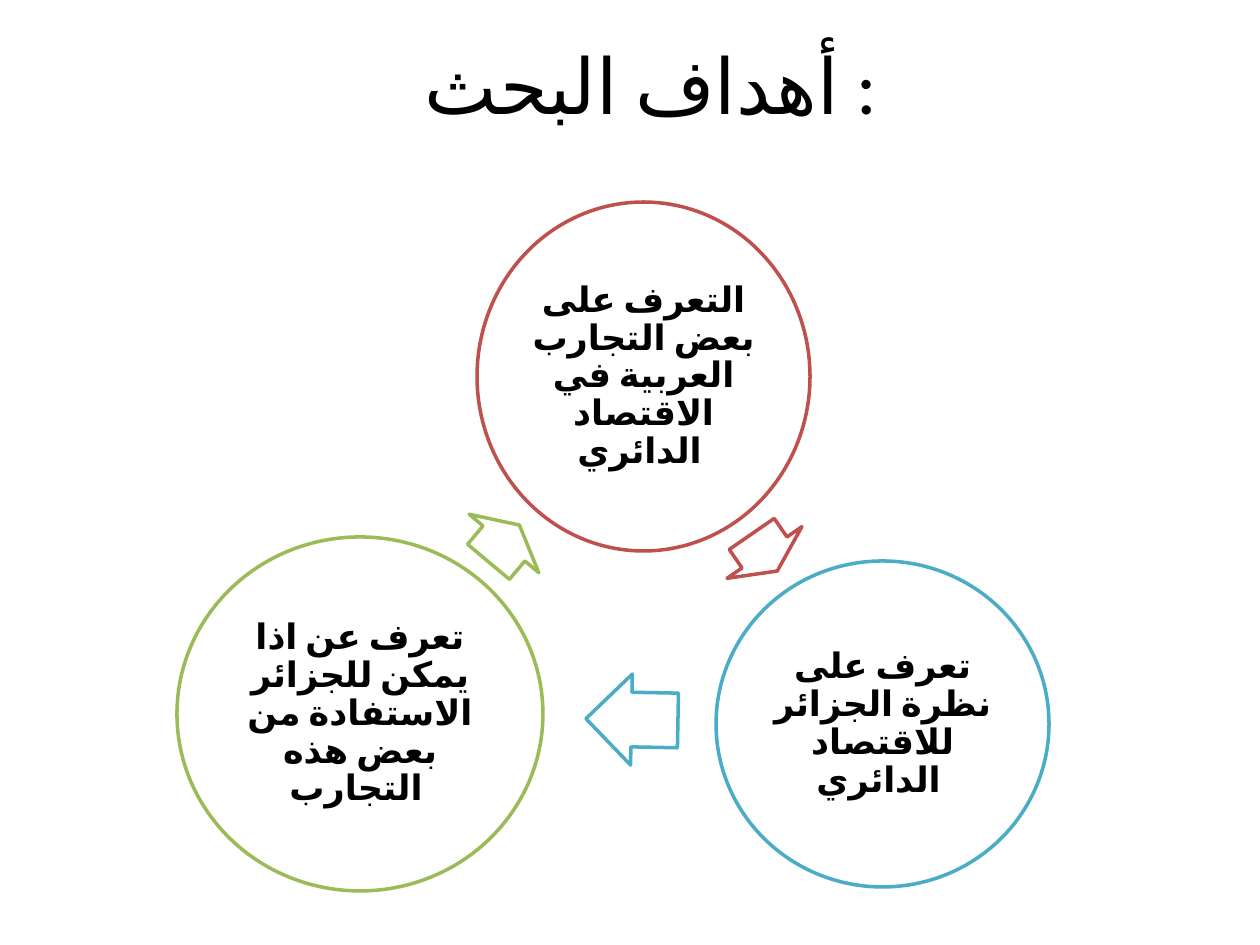
import lxml.etree
import pptx
import pptx.dml.color
import pptx.enum.shapes
import pptx.enum.text
import pptx.oxml.ns
import pptx.util

PIXEL = 914400 / 126
FONT = "Calibri"
COLORS = {
    "white": "FFFFFF",
    "black": "000000",
    "red": "C0504D",
    "blue": "4BACC6",
    "green": "9BBB59",
}
GOALS = [
    ("التعرف على بعض التجارب العربية في الاقتصاد الدائري ", "red",
     (477, 202, 333, 349), (742, 507, 45, 91), 55.4),
    ("تعرف على نظرة الجزائر للاقتصاد الدائري ", "blue",
     (716, 561, 333, 326), (586, 674, 92, 91), 181.1),
    ("تعرف عن اذا يمكن للجزائر الاستفادة من بعض هذه التجارب ", "green",
     (177, 537, 366, 354), (480, 498, 48, 91), 310),
]


def px(length):
    """Turn whole pixels into EMU."""
    return pptx.util.Emu(round(length * PIXEL))


def rgb(name):
    """Look up a named colour."""
    return pptx.dml.color.RGBColor.from_string(COLORS[name])


def set_arabic(run):
    """Give a run the Arabic language and a complex-script font."""
    properties = run._r.get_or_add_rPr()
    properties.set("lang", "ar-DZ")
    script_font = lxml.etree.SubElement(properties, pptx.oxml.ns.qn("a:cs"))
    script_font.set("typeface", FONT)


def write_text(shape, text, size, bold=False, spacing=1.0, margins=(12, 6)):
    """Write one centred paragraph into a shape."""
    frame = shape.text_frame
    frame.word_wrap = True
    frame.vertical_anchor = pptx.enum.text.MSO_ANCHOR.MIDDLE
    frame.margin_left = frame.margin_right = px(margins[0])
    frame.margin_top = frame.margin_bottom = px(margins[1])
    paragraph = frame.paragraphs[0]
    paragraph.alignment = pptx.enum.text.PP_ALIGN.CENTER
    paragraph.line_spacing = spacing
    run = paragraph.add_run()
    run.text = text
    run.font.name = FONT
    run.font.size = pptx.util.Pt(size)
    run.font.bold = bold
    run.font.color.rgb = rgb("black")
    set_arabic(run)


def add_outlined(slide, kind, box, color):
    """Add a white preset shape with a coloured outline."""
    shape = slide.shapes.add_shape(kind, *map(px, box))
    shape.shadow.inherit = False
    shape.fill.solid()
    shape.fill.fore_color.rgb = rgb("white")
    shape.line.color.rgb = rgb(color)
    shape.line.width = pptx.util.Pt(2)
    return shape


def add_goal(slide, text, color, box):
    """Add a circle that holds one research goal."""
    circle = add_outlined(slide, pptx.enum.shapes.MSO_SHAPE.OVAL, box, color)
    write_text(circle, text, 20, bold=True, spacing=0.9, margins=(4, 4))


def add_arrow(slide, color, box, rotation):
    """Add a block arrow that leads to the next goal."""
    arrow = add_outlined(slide, pptx.enum.shapes.MSO_SHAPE.RIGHT_ARROW, box, color)
    arrow.adjustments[0] = 0.6
    arrow.adjustments[1] = 0.5
    arrow.rotation = rotation


def main():
    """Build the slide of research goals."""
    presentation = pptx.Presentation()
    presentation.slide_width = px(1260)
    presentation.slide_height = px(945)
    slide = presentation.slides.add_slide(presentation.slide_layouts[6])
    title = slide.shapes.add_textbox(*map(px, (84, 26, 1134, 115)))
    write_text(title, "أهداف البحث :", 44)
    for text, color, circle_box, arrow_box, rotation in GOALS:
        add_goal(slide, text, color, circle_box)
        add_arrow(slide, color, arrow_box, rotation)
    presentation.save("out.pptx")


if __name__ == "__main__":
    main()
